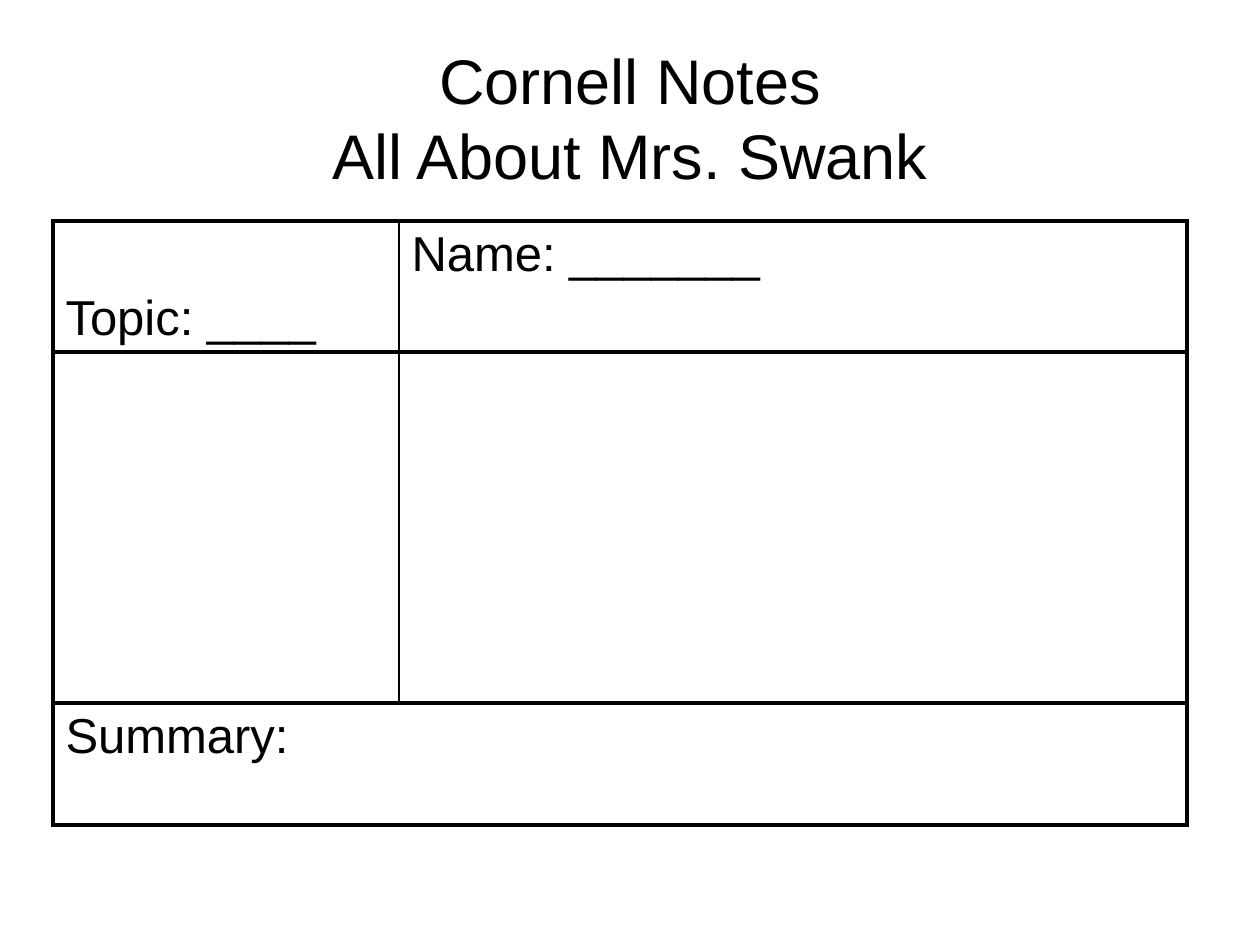
from lxml import etree
from pptx import Presentation
from pptx.dml.color import RGBColor
from pptx.enum.text import MSO_ANCHOR, MSO_AUTO_SIZE, PP_ALIGN
from pptx.oxml.ns import qn
from pptx.util import Emu, Pt

PX_PER_INCH = 126
FONT = "Arial"
COLORS = {"ink": "000000", "paper": "FFFFFF"}
CENTER, LEFT = PP_ALIGN.CENTER, PP_ALIGN.LEFT
TOP, MIDDLE, BOTTOM = MSO_ANCHOR.TOP, MSO_ANCHOR.MIDDLE, MSO_ANCHOR.BOTTOM
NO_AUTOFIT = MSO_AUTO_SIZE.NONE
TITLE_ONLY_LAYOUT = 5
THICK, THIN = 2.25, 1


def px(length):
    return Emu(round(length * 914400 / PX_PER_INCH))


def write_text(text_frame, text, size, align=LEFT):
    paragraph = text_frame.paragraphs[0]
    paragraph.text = text
    paragraph.alignment = align
    for run in paragraph.runs:
        run.font.name = FONT
        run.font.size = Pt(size)
        run.font.color.rgb = RGBColor.from_string(COLORS["ink"])


def set_borders(cell, widths):
    """Draw the sides L, R, T, B of a cell with the given widths in points."""
    properties = cell._tc.get_or_add_tcPr()
    for index, (side, width) in enumerate(zip("LRTB", widths)):
        line = etree.Element(qn(f"a:ln{side}"), w=str(Pt(width)))
        fill = etree.SubElement(line, qn("a:solidFill"))
        etree.SubElement(fill, qn("a:srgbClr"), val=COLORS["ink"])
        properties.insert(index, line)


def add_title(slide, left, top, width, height):
    title = slide.shapes.title
    title.left, title.top = px(left), px(top)
    title.width, title.height = px(width), px(height)
    title.text_frame.auto_size = NO_AUTOFIT
    title.text_frame.vertical_anchor = MIDDLE
    write_text(title.text_frame, "Cornell Notes\vAll About Mrs. Swank", 36, align=CENTER)


def add_notes_table(slide, left, top, column_widths, row_heights):
    frame = slide.shapes.add_table(
        len(row_heights), len(column_widths), px(left), px(top),
        px(sum(column_widths)), px(sum(row_heights)))
    table = frame.table
    table.first_row = table.horz_banding = False
    for column, width in zip(table.columns, column_widths):
        column.width = px(width)
    for row, height in zip(table.rows, row_heights):
        row.height = px(height)

    # Thick outline and row rules, thin rule between the columns
    last_row = len(row_heights) - 1
    for row_index, row in enumerate(table.rows):
        divider = THICK if row_index == last_row else THIN
        cue_cell, notes_cell = row.cells
        for cell in (cue_cell, notes_cell):
            cell.fill.background()
        set_borders(cue_cell, (THICK, divider, THICK, THICK))
        set_borders(notes_cell, (divider, THICK, THICK, THICK))

    # The summary spans both columns
    table.cell(last_row, 0).merge(table.cell(last_row, 1))

    labels = [(0, 0, "Topic: ____", BOTTOM),
              (0, 1, "Name: _______", TOP),
              (last_row, 0, "Summary:", TOP)]
    for row_index, column_index, text, anchor in labels:
        cell = table.cell(row_index, column_index)
        cell.vertical_anchor = anchor
        write_text(cell.text_frame, text, 28)


def main():
    presentation = Presentation()
    presentation.slide_width, presentation.slide_height = px(1260), px(945)
    slide = presentation.slides.add_slide(presentation.slide_layouts[TITLE_ONLY_LAYOUT])
    background = slide.background.fill
    background.solid()
    background.fore_color.rgb = RGBColor.from_string(COLORS["paper"])

    add_title(slide, 63, 38, 1134, 158)
    add_notes_table(slide, 53, 221, column_widths=(346, 788), row_heights=(131, 351, 122))
    presentation.save("out.pptx")


if __name__ == "__main__":
    main()
